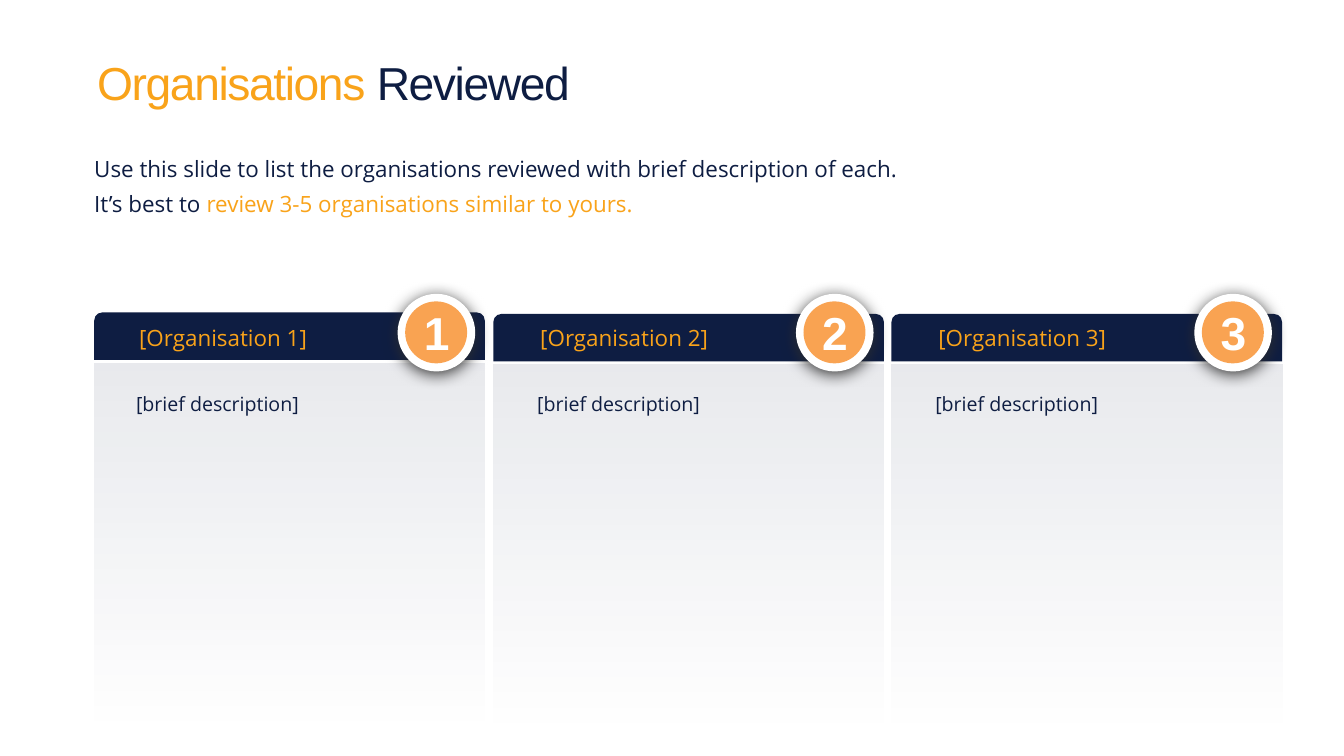
from lxml import etree
from pptx import Presentation
from pptx.dml.color import RGBColor
from pptx.enum import shapes, text
from pptx.oxml import ns
from pptx.util import Inches, Pt

NAVY = RGBColor(0x0E, 0x1D, 0x42)
AMBER = RGBColor(0xF9, 0xA3, 0x1A)
ORANGE = RGBColor(0xF9, 0xA3, 0x52)
WHITE = RGBColor(0xFF, 0xFF, 0xFF)
SHADOW = RGBColor(0x2F, 0x2F, 0x2F)

HEADING_FONT = "Arial"
BODY_FONT = "Open Sans"
LEFT = 1.87
CARD_WIDTH = 7.75


class SlideBuilder:
    def __init__(self, slide):
        self.slide = slide

    def shape(self, preset, box, color, parent=None):
        shape = (parent or self.slide).shapes.add_shape(preset, *map(Inches, box))
        shape.shadow.inherit = False
        shape.line.fill.background()
        shape.fill.solid()
        shape.fill.fore_color.rgb = color
        return shape

    def fading_panel(self, box, color):
        """Rectangle that fades downwards from 10 % opacity to nothing."""
        panel = self.shape(shapes.MSO_SHAPE.RECTANGLE, box, color)
        panel.fill.gradient()
        panel.fill.gradient_angle = 270
        for stop in panel.fill.gradient_stops:
            stop.color.rgb = color
        stop_colors = panel.element.iter(ns.qn("a:srgbClr"))
        for stop_color, opacity in zip(list(stop_colors), (10000, 0)):
            etree.SubElement(stop_color, ns.qn("a:alpha"), val=str(opacity))

    def drop_shadow(self, shape):
        effects = shape.element.spPr.find(ns.qn("a:effectLst"))
        shadow = etree.SubElement(
            effects, ns.qn("a:outerShdw"), blurRad=str(Pt(23)), dist=str(Pt(4)),
            dir="5400000", algn="ctr", rotWithShape="0")
        color = etree.SubElement(shadow, ns.qn("a:srgbClr"), val=str(SHADOW))
        etree.SubElement(color, ns.qn("a:alpha"), val="92000")

    def text(self, box, paragraphs, size, font=BODY_FONT, bold=False, inset=0.0,
             middle=False, centered=False, grow=True, before=0,
             line_spacing=None, tracking=None, parent=None):
        """Each paragraph is a list of (wording, color) runs."""
        textbox = (parent or self.slide).shapes.add_textbox(*map(Inches, box))
        frame = textbox.text_frame
        frame.word_wrap = True
        frame.auto_size = (text.MSO_AUTO_SIZE.SHAPE_TO_FIT_TEXT if grow
                           else text.MSO_AUTO_SIZE.NONE)
        frame.vertical_anchor = (text.MSO_ANCHOR.MIDDLE if middle
                                 else text.MSO_ANCHOR.TOP)
        frame.margin_left = frame.margin_right = Inches(inset)
        frame.margin_top = frame.margin_bottom = Inches(inset)
        for index, runs in enumerate(paragraphs):
            paragraph = frame.add_paragraph() if index else frame.paragraphs[0]
            paragraph.space_before = Pt(before)
            paragraph.line_spacing = line_spacing
            if centered:
                paragraph.alignment = text.PP_ALIGN.CENTER
            for wording, color in runs:
                run = paragraph.add_run()
                run.text = wording
                run.font.name = font
                run.font.size = Pt(size)
                run.font.bold = bold
                run.font.color.rgb = color
                if tracking:
                    run.font._element.set("spc", str(tracking * 100))

    def badge(self, left, number):
        group = self.slide.shapes.add_group_shape()
        oval = shapes.MSO_SHAPE.OVAL
        ring = self.shape(oval, (left, 5.83, 1.54, 1.54), WHITE, group)
        self.drop_shadow(ring)
        self.shape(oval, (left + 0.15, 5.98, 1.23, 1.23), ORANGE, group)
        self.text((left + 0.34, 5.99, 0.87, 1.21), [[(str(number), WHITE)]], 66,
                  HEADING_FONT, bold=True, inset=0.06, middle=True,
                  centered=True, parent=group)

    def card(self, number, left, top, text_left):
        self.fading_panel((left, top + 1.01, CARD_WIDTH, 7.53), NAVY)
        self.shape(shapes.MSO_SHAPE.ROUND_2_SAME_RECTANGLE,
                   (left, top, CARD_WIDTH, 0.94), NAVY)
        self.text((text_left, 6.38, 5.04, 0.64),
                  [[(f"[Organisation {number}]", AMBER)]], 32,
                  inset=0.06, middle=True)
        self.text((text_left, 7.78, 6.58, 0.47),
                  [[("[brief description]", NAVY)]], 28, before=12)


def main():
    presentation = Presentation()
    presentation.slide_width = Inches(26.67)
    presentation.slide_height = Inches(15)
    slide = presentation.slides.add_slide(presentation.slide_layouts[6])
    builder = SlideBuilder(slide)

    builder.text((LEFT, 1.24, 24.54, 1.26),
                 [[("Organisations ", AMBER), ("Reviewed", NAVY)]], 66,
                 HEADING_FONT, inset=0.06, grow=False, line_spacing=0.8,
                 tracking=-2)
    builder.text((LEFT, 3.08, 22.93, 1.22), [
        [("Use this slide to list the organisations reviewed "
          "with brief description of each.", NAVY)],
        [("It’s best to ", NAVY),
         ("review 3-5 organisations similar to yours.", AMBER)],
    ], 32, middle=True, before=12)

    cards = [(LEFT, 6.2, 2.7), (9.79, 6.23, 10.66), (17.69, 6.23, 18.56)]
    for number, (left, top, text_left) in enumerate(cards, start=1):
        builder.card(number, left, top, text_left)
        builder.badge(7.89 + 7.905 * (number - 1), number)

    presentation.save("out.pptx")


if __name__ == "__main__":
    main()
